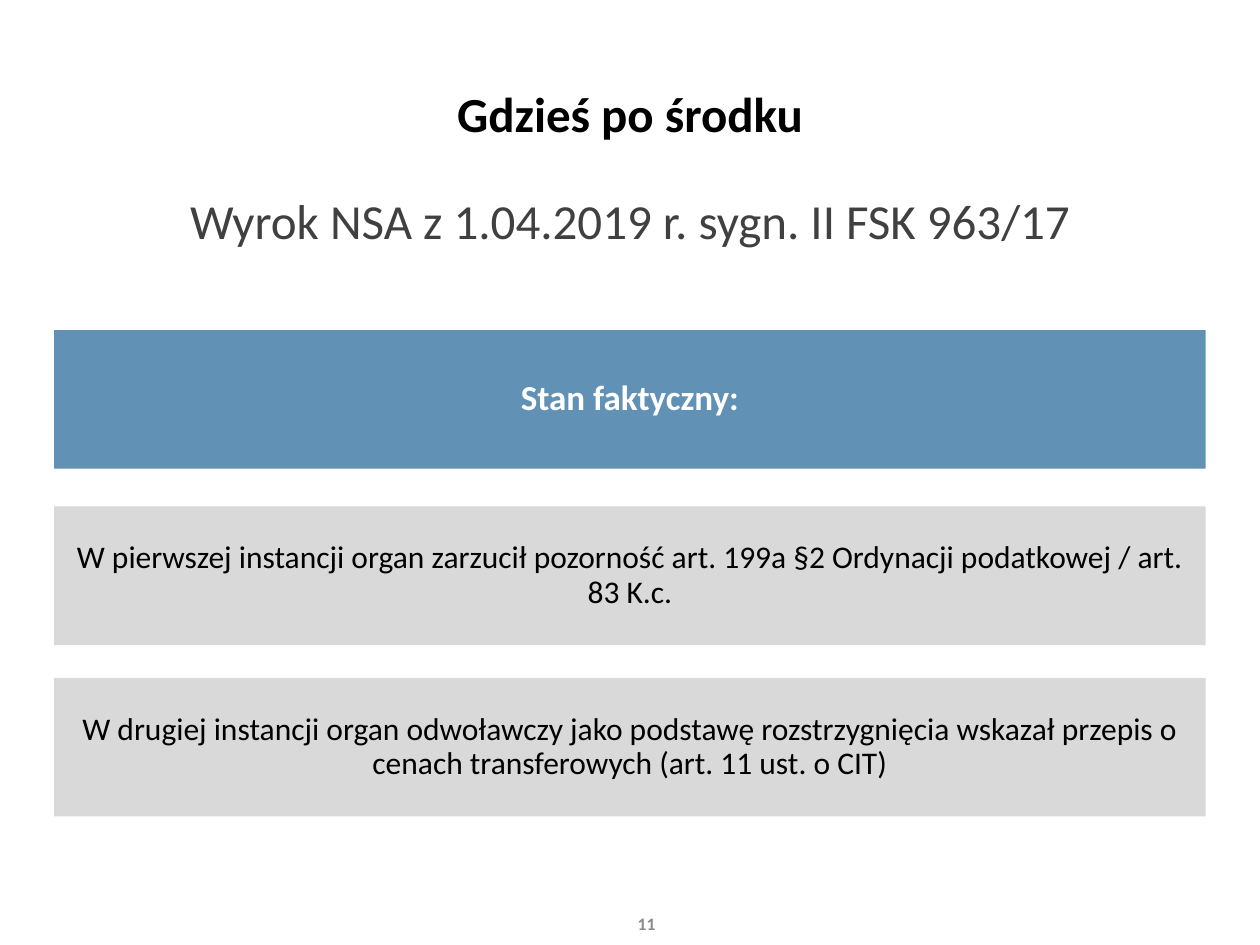
from dataclasses import dataclass

from pptx import Presentation
from pptx.dml.color import RGBColor
from pptx.enum.shapes import MSO_SHAPE
from pptx.enum.text import MSO_ANCHOR, MSO_AUTO_SIZE, PP_ALIGN
from pptx.util import Inches, Pt

COLORS = {
    "title": "000000",
    "subtitle": "404040",
    "header": "6191B4",
    "header_text": "FFFFFF",
    "fact": "D9D9D9",
    "fact_text": "000000",
    "number": "8C8C8C",
}
FONT = "Calibri"
BAR_LEFT, BAR_WIDTH, BAR_HEIGHT = 0.43, 9.14, 1.1


@dataclass
class Bar:
    top: float
    text: str
    style: str = "fact"
    size: int = 18
    bold: bool = False


BARS = [
    Bar(2.62, "Stan faktyczny:", style="header", size=20, bold=True),
    Bar(4.02, "W pierwszej instancji organ zarzucił pozorność art. 199a §2 "
              "Ordynacji podatkowej / art. 83 K.c."),
    Bar(5.38, "W drugiej instancji organ odwoławczy jako podstawę rozstrzygnięcia "
              "wskazał przepis o cenach transferowych (art. 11 ust. o CIT)"),
]


def place(sp, left: float, top: float, width: float, height: float) -> None:
    sp.left, sp.top = Inches(left), Inches(top)
    sp.width, sp.height = Inches(width), Inches(height)


def write(sp, text: str, *, size: int, color: str, bold: bool = False,
          align=PP_ALIGN.CENTER, spacing: float = 0.9) -> None:
    """Fill a shape with one formatted, vertically centred paragraph."""
    tf = sp.text_frame
    tf.word_wrap = True
    tf.auto_size = MSO_AUTO_SIZE.NONE
    tf.vertical_anchor = MSO_ANCHOR.MIDDLE
    p = tf.paragraphs[0]
    p.alignment = align
    p.line_spacing = spacing
    p.space_before = Pt(0)
    r = p.add_run()
    r.text = text
    r.font.name = FONT
    r.font.size = Pt(size)
    r.font.bold = bold
    r.font.color.rgb = RGBColor.from_string(COLORS[color])


def draw_bar(s, bar: Bar) -> None:
    sp = s.shapes.add_shape(MSO_SHAPE.RECTANGLE, Inches(BAR_LEFT), Inches(bar.top),
                            Inches(BAR_WIDTH), Inches(BAR_HEIGHT))
    sp.shadow.inherit = False
    sp.fill.solid()
    sp.fill.fore_color.rgb = RGBColor.from_string(COLORS[bar.style])
    sp.line.fill.background()
    write(sp, bar.text, size=bar.size, color=f"{bar.style}_text", bold=bar.bold)


def main() -> None:
    prs = Presentation()
    prs.slide_width, prs.slide_height = Inches(10), Inches(7.5)
    s = prs.slides.add_slide(prs.slide_layouts[0])

    title, subtitle = s.shapes.title, s.placeholders[1]
    place(title, 0, 0.61, 10, 0.68)
    write(title, "Gdzieś po środku", size=28, color="title", bold=True)
    title.text_frame.margin_top = 0
    place(subtitle, 0, 1.04, 10, 1.47)
    write(subtitle, "Wyrok NSA z 1.04.2019 r. sygn. II FSK 963/17",
          size=28, color="subtitle")

    for bar in BARS:
        draw_bar(s, bar)

    number = s.shapes.add_textbox(Inches(4.7), Inches(7.13), Inches(0.6), Inches(0.4))
    write(number, "11", size=10, color="number", bold=True,
          align=PP_ALIGN.RIGHT, spacing=1.0)

    prs.save("out.pptx")


if __name__ == "__main__":
    main()
